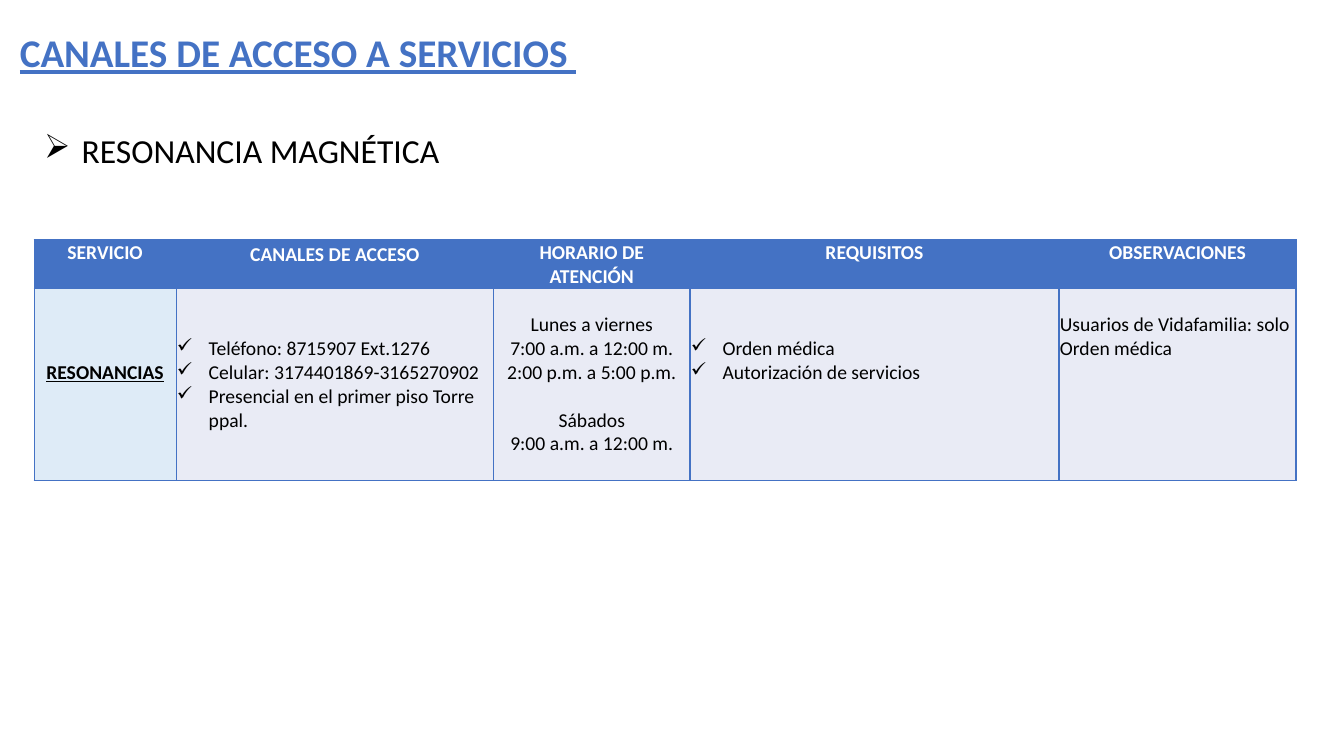
from dataclasses import dataclass
from lxml.etree import SubElement as Sub
from pptx import Presentation
from pptx.dml.color import RGBColor as Rgb
from pptx.enum.text import MSO_ANCHOR as Anchor, PP_ALIGN as Align
from pptx.oxml.ns import qn
from pptx.util import Cm, Pt


@dataclass
class Theme:
    font: str = "Calibri"
    blue: str = "4472C4"
    pale: str = "DEEBF7"
    gray: str = "E9EBF5"
    white: str = "FFFFFF"
    black: str = "000000"
    title: int = 28
    head: int = 24
    body: int = 14
    line: float = 0.6  # height of one body line in cm


class Deck:
    def __init__(self, theme):
        self.theme = theme
        self.prs = Presentation()
        self.prs.slide_width, self.prs.slide_height = Cm(33.87), Cm(19.05)
        self.slide = self.prs.slides.add_slide(self.prs.slide_layouts[6])

    def bullet(self, para, mark, hang):
        props = para._p.get_or_add_pPr()
        props.set("marL", str(Cm(hang)))
        props.set("indent", str(-Cm(hang)))
        Sub(props, qn("a:buChar")).set("char", mark)

    def fill_text(self, frame, text, size, color, bold=False, under=False,
                  align=Align.LEFT, mark=None, hang=0.8):
        frame.text = text
        frame.word_wrap = True
        for para in frame.paragraphs:
            para.alignment = align
            if mark:
                self.bullet(para, mark, hang)
            for run in para.runs:
                font = run.font
                font.name, font.size = self.theme.font, Pt(size)
                font.bold, font.underline = bold, under
                font.color.rgb = Rgb.from_string(color)

    def text(self, x, y, w, h, text, size, color, anchor=Anchor.TOP, **style):
        box = self.slide.shapes.add_textbox(Cm(x), Cm(y), Cm(w), Cm(h))
        self.fill_text(box.text_frame, text, size, color, **style)
        box.text_frame.vertical_anchor = anchor

    def border(self, cell):
        props = cell._tc.get_or_add_tcPr()
        for side in "LRTB":
            line = Sub(props, qn("a:ln" + side), w=str(Pt(1)))
            fill = Sub(line, qn("a:solidFill"))
            Sub(fill, qn("a:srgbClr")).set("val", self.theme.blue)

    def cell(self, cell, text, fill, color, skip=0, **style):
        self.border(cell)
        cell.fill.solid()
        cell.fill.fore_color.rgb = Rgb.from_string(fill)
        cell.margin_left = cell.margin_right = Cm(0.02)
        cell.margin_top = Cm(0.02 + skip * self.theme.line)
        cell.margin_bottom = 0
        self.fill_text(cell.text_frame, text, self.theme.body, color, **style)

    def table(self, x, y, cols, rows):
        grid = self.slide.shapes.add_table(
            len(rows), len(cols), Cm(x), Cm(y), Cm(sum(cols)), Cm(sum(rows))).table
        for col, width in zip(grid.columns, cols):
            col.width = Cm(width)
        for row, height in zip(grid.rows, rows):
            row.height = Cm(height)
        return grid


def main():
    look = Theme()
    deck = Deck(look)

    # Title and service heading
    deck.text(0.25, 0.43, 23.24, 1.6, "CANALES DE ACCESO A SERVICIOS ",
              look.title, look.blue, Anchor.BOTTOM, bold=True, under=True)
    deck.text(0.86, 3.15, 13.26, 1.27, "RESONANCIA MAGNÉTICA",
              look.head, look.black, mark="➢", hang=0.95)

    # Table header
    grid = deck.table(0.86, 6.05, [3.58, 8, 4.95, 9.3, 5.97], [1.22, 4.83])
    heads = ["SERVICIO", "CANALES DE ACCESO", "HORARIO DE\nATENCIÓN",
             "REQUISITOS", "OBSERVACIONES"]
    for col, head in enumerate(heads):
        deck.cell(grid.cell(0, col), head, look.blue, look.white,
                  bold=True, align=Align.CENTER)
    grid.cell(0, 1).text_frame.paragraphs[0].line_spacing = 1.07

    # Table body: text, fill, lines left free above, style
    ticks = {"mark": "✓"}
    mid = {"align": Align.CENTER}
    body = [
        ("RESONANCIAS", look.pale, 3, {"bold": True, "under": True, **mid}),
        ("Teléfono: 8715907 Ext.1276\nCelular: 3174401869-3165270902\n"
         "Presencial en el primer piso Torre ppal.", look.gray, 2, ticks),
        ("Lunes a viernes\n7:00 a.m. a 12:00 m.\n2:00 p.m. a 5:00 p.m.\n"
         "Sábados\n9:00 a.m. a 12:00 m.", look.gray, 1, mid),
        ("Orden médica\nAutorización de servicios", look.gray, 2, ticks),
        ("Usuarios de Vidafamilia: solo Orden médica", look.gray, 1, {}),
    ]
    for col, (text, fill, skip, style) in enumerate(body):
        deck.cell(grid.cell(1, col), text, fill, look.black, skip, **style)
    grid.cell(1, 2).text_frame.paragraphs[3].space_before = Pt(17)

    deck.prs.save("out.pptx")


if __name__ == "__main__":
    main()
